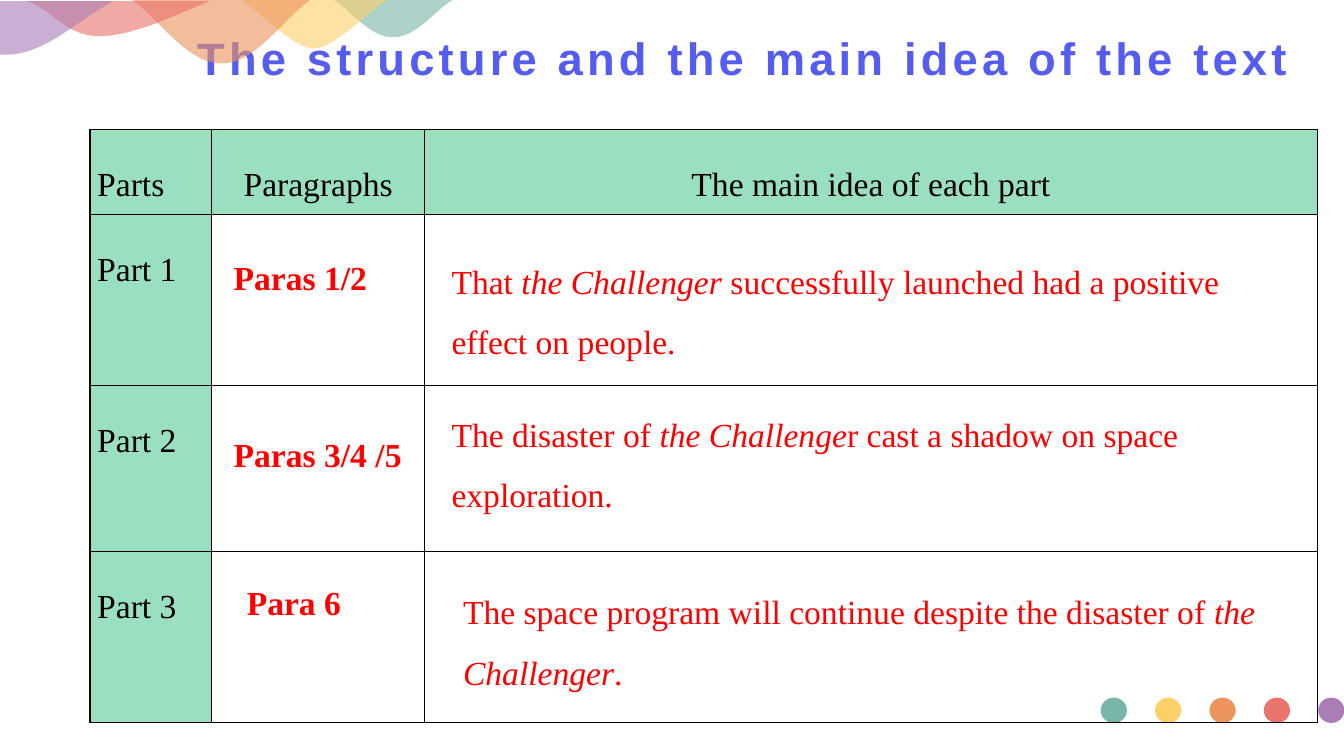
from itertools import accumulate

from lxml import etree
from pptx import Presentation
from pptx.dml.color import RGBColor
from pptx.enum.shapes import MSO_SHAPE
from pptx.enum.text import MSO_ANCHOR, PP_ALIGN
from pptx.oxml.ns import qn
from pptx.util import Cm, Pt

OVAL = MSO_SHAPE.OVAL
TOP, MIDDLE = MSO_ANCHOR.TOP, MSO_ANCHOR.MIDDLE
LEFT, CENTER = PP_ALIGN.LEFT, PP_ALIGN.CENTER

HUES = {
    "teal": "78B6A9", "yellow": "FDD069", "orange": "ED935C",
    "red": "E9746E", "purple": "AB7DB6", "title": "555DF1",
    "mint": "9ADFBF", "rule": "080000", "black": "000000", "note": "FF0000",
}
SERIF = "Times New Roman"
HEAD = {"name": "Arial", "size": Pt(32.4), "bold": True}
CELL = {"name": SERIF, "size": Pt(24), "bold": False}
LABEL = {"name": SERIF, "size": Pt(24), "bold": True}
IDEA = {"name": SERIF, "size": Pt(24), "bold": False}

# Seven x values from right to left, then top, shoulder and depth
WAVES = {
    "teal": ((11.4, 10.92, 10.49, 9.91, 9.32, 8.89, 8.41), (0, 0.3, 0.94)),
    "yellow": ((9.75, 9.14, 8.41, 7.9, 7.42, 6.68, 6.07), (0, 0.41, 1.22)),
    "orange": ((7.82, 7.09, 6.43, 5.59, 4.72, 4.06, 3.33), (0, 0.53, 1.6)),
    "red": ((5.28, 4.52, 3.4, 2.51, 1.65, 1.45, 0.69), (0.03, 0.33, 0.91)),
    "purple": ((2.87, 1.96, 1.17, 0.13, -0.91, -1.7, -2.64), (0.03, 0.48, 1.38)),
}

COLS = (3.07, 5.36, 22.5)
ROWS = (2.13, 4.32, 4.17, 4.32)
GRID = (
    ("Parts", "Paragraphs", "The main idea of each part"),
    ("Part 1", "", ""),
    ("Part 2", "", ""),
    ("Part 3", "", ""),
)
# Offset and width inside the row's cell, then runs as (text, italic)
LABELS = (
    (0.3, 0.95, 4.55, [("Paras 1/2", False)]),
    (0.3, 1.1, 4.75, [("Paras 3/4 /5", False)]),
    (0.63, 0.64, 3.78, [("Para 6", False)]),
)
IDEAS = (
    (0.43, 0.54, 21.23, [
        ("That", False), (" the Challenger", True),
        (" successfully launched had a positive effect on people.", False)]),
    (0.43, 0.07, 21.84, [
        ("The disaster of ", False), ("the Challenge", True),
        ("r cast a shadow on space exploration.", False)]),
    (0.72, 0.37, 21.29, [
        ("The space program will continue despite the disaster of", False),
        (" the Challenger", True), (".", False)]),
)


def hue(name):
    return RGBColor.from_string(HUES[name])


def style(run, look, color):
    for key, value in look.items():
        setattr(run.font, key, value)
    run.font.color.rgb = hue(color)


def paint(shape, color):
    shape.shadow.inherit = False
    shape.fill.solid()
    shape.fill.fore_color.rgb = hue(color)
    shape.line.fill.background()


def write(slide, box, runs, look, color, gap=1.0, anchor=TOP):
    frame = slide.shapes.add_textbox(*map(Cm, box)).text_frame
    frame.word_wrap = True
    frame.vertical_anchor = anchor
    para = frame.paragraphs[0]
    para.line_spacing = gap
    for text, slant in runs:
        run = para.add_run()
        run.text = text
        style(run, look, color)
        run.font.italic = slant
    return para


def add_title(slide, box):
    text = "The structure and the main idea of the text"
    para = write(slide, box, [(text, False)], HEAD, "title", anchor=MIDDLE)
    para.runs[0]._r.get_or_add_rPr().set("spc", "300")


def add_dots(slide, box):
    x, y, w, h = box
    size = 0.66
    step = (w - size) / (len(WAVES) - 1)
    for i, color in enumerate(WAVES):
        dot = slide.shapes.add_shape(OVAL, Cm(x + i * step), Cm(y), Cm(size), Cm(h))
        paint(dot, color)


def bend(shape):
    """Turn each three line segments into one cubic curve."""
    lines = list(shape._element.iter(qn("a:lnTo")))
    for i in range(0, len(lines), 3):
        arc = etree.Element(qn("a:cubicBezTo"))
        lines[i].addprevious(arc)
        for line in lines[i:i + 3]:
            arc.append(line[0])
            line.getparent().remove(line)


def add_waves(slide, left, top):
    for color, (xs, (rim, side, low)) in WAVES.items():
        ys = (rim, side, low, low, low, side, rim)
        pts = [(Cm(left + x), Cm(top + y)) for x, y in zip(xs, ys)]
        pen = slide.shapes.build_freeform(*pts[0])
        pen.add_line_segments(pts[1:], close=True)
        wave = pen.convert_to_shape()
        bend(wave)
        paint(wave, color)
        tone = wave.fill._xPr.find(".//" + qn("a:srgbClr"))
        etree.SubElement(tone, qn("a:alpha")).set("val", "61000")


def add_edges(cell):
    props = cell._tc.get_or_add_tcPr()
    for i, side in enumerate(("lnL", "lnR", "lnT", "lnB")):
        edge = etree.Element(qn("a:" + side), w=str(Pt(1)))
        fill = etree.SubElement(edge, qn("a:solidFill"))
        etree.SubElement(fill, qn("a:srgbClr"), val=HUES["rule"])
        props.insert(i, edge)


def add_grid(slide, box):
    table = slide.shapes.add_table(len(ROWS), len(COLS), *map(Cm, box)).table
    table.first_row = table.horz_banding = False
    for col, width in zip(table.columns, COLS):
        col.width = Cm(width)
    for row, height in zip(table.rows, ROWS):
        row.height = Cm(height)
    for r, line in enumerate(GRID):
        for c, text in enumerate(line):
            cell = table.cell(r, c)
            cell.margin_left = cell.margin_right = Cm(0.18)
            cell.margin_top, cell.margin_bottom = Cm(0.93), 0
            if text:
                cell.fill.solid()
                cell.fill.fore_color.rgb = hue("mint")
                para = cell.text_frame.paragraphs[0]
                para.alignment = CENTER if c else LEFT
                run = para.add_run()
                run.text = text
                style(run, CELL, "black")
            else:
                cell.fill.background()
            add_edges(cell)


def add_notes(slide, box):
    lefts = list(accumulate(COLS, initial=box[0]))
    tops = list(accumulate(ROWS, initial=box[1]))
    kinds = ((1, LABELS, LABEL, 1.27, 1.0), (2, IDEAS, IDEA, 3.33, 1.5))
    for col, notes, look, high, gap in kinds:
        for top, (dx, dy, wide, runs) in zip(tops[1:], notes):
            spot = (lefts[col] + dx, top + dy, wide, high)
            write(slide, spot, runs, look, "note", gap)


def main():
    deck = Presentation()
    deck.slide_width, deck.slide_height = Cm(33.87), Cm(19.05)
    slide = deck.slides.add_slide(deck.slide_layouts[6])
    grid = (2.27, 3.27, sum(COLS), sum(ROWS))
    # Title and decoration
    add_title(slide, (4.72, 0.46, 28.24, 1.96))
    add_dots(slide, (27.74, 17.58, 6.14, 0.64))
    add_waves(slide, 0, 0)
    # Table with the answers over it
    add_grid(slide, grid)
    add_notes(slide, grid)
    deck.save("out.pptx")


if __name__ == "__main__":
    main()
